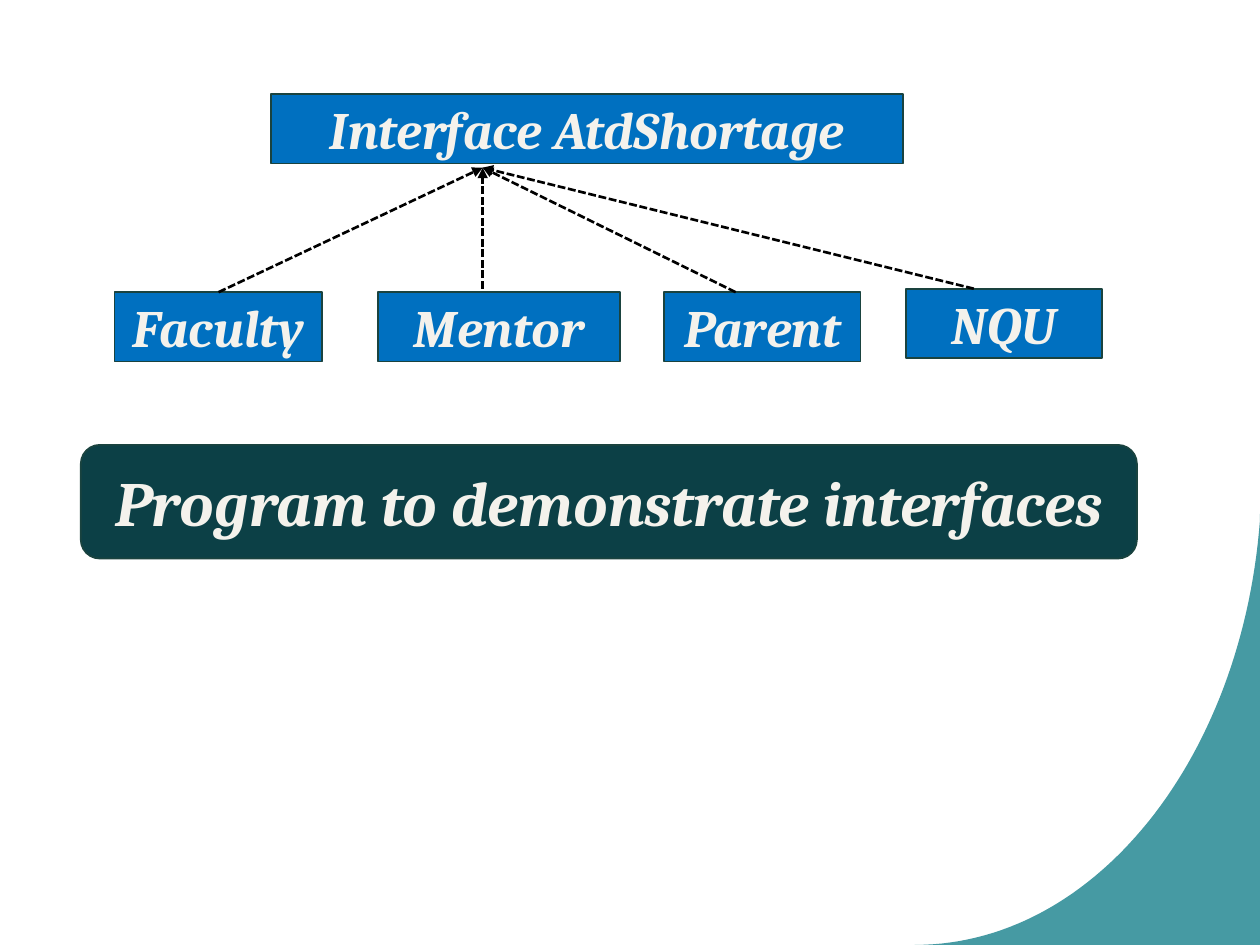
from lxml import etree
from pptx import Presentation
from pptx import util as u
from pptx.dml.color import RGBColor
from pptx.enum import dml, shapes, text
from pptx.oxml.ns import qn

TEAL = RGBColor(0x18, 0x81, 0x8C)
BLUE = RGBColor(0x00, 0x70, 0xC0)
DARK_TEAL = RGBColor(0x0C, 0x40, 0x46)
OUTLINE = RGBColor(0x1A, 0x43, 0x3F)
CREAM = RGBColor(0xF4, 0xF2, 0xEC)
BLACK = RGBColor(0, 0, 0)

RECTANGLE = shapes.MSO_SHAPE.RECTANGLE
ROUNDED = shapes.MSO_SHAPE.ROUNDED_RECTANGLE

presentation = Presentation()
presentation.slide_width = u.Cm(25.4)
presentation.slide_height = u.Cm(19.05)
slide = presentation.slides.add_slide(presentation.slide_layouts[6])


def add_box(label, kind, left, top, width, height, color, size):
    shape = slide.shapes.add_shape(kind, u.Cm(left), u.Cm(top), u.Cm(width), u.Cm(height))
    shape.shadow.inherit = False
    shape.fill.solid()
    shape.fill.fore_color.rgb = color
    shape.line.color.rgb = OUTLINE
    shape.line.width = u.Pt(1)
    shape.text_frame.vertical_anchor = text.MSO_ANCHOR.MIDDLE
    paragraph = shape.text_frame.paragraphs[0]
    paragraph.alignment = text.PP_ALIGN.CENTER
    run = paragraph.add_run()
    run.text = label
    run.font.name = "Cambria"
    run.font.size = u.Pt(size)
    run.font.bold = True
    run.font.italic = True
    run.font.color.rgb = CREAM
    return shape


curve_controls = [(18.44, 19.05), (22.07, 19.05), (25.04, 15.29), (25.4, 10.49)]
curve_steps = 60
curve_points = []
for step in range(curve_steps + 1):
    t = step / curve_steps
    weights = [(1 - t) ** 3, 3 * t * (1 - t) ** 2, 3 * t ** 2 * (1 - t), t ** 3]
    curve_points.append(tuple(
        u.Cm(sum(weight * point[axis] for weight, point in zip(weights, curve_controls)))
        for axis in (0, 1)
    ))

builder = slide.shapes.build_freeform(u.Cm(25.4), u.Cm(10.36))
builder.add_line_segments([(u.Cm(25.4), u.Cm(19.05))] + curve_points)
corner = builder.convert_to_shape()
corner.shadow.inherit = False
corner.fill.solid()
corner.fill.fore_color.rgb = TEAL
corner.line.fill.background()
corner_color = corner._element.spPr.find(qn("a:solidFill"))[0]
etree.SubElement(corner_color, qn("a:alpha"), val="80000")

box_height = 1.4
add_box("Interface AtdShortage", RECTANGLE, 5.46, 1.9, 12.75, box_height, BLUE, 30)

arrow_tip = (u.Cm(9.73), u.Cm(3.38))
implementers = [
    ("Faculty", 2.31, 5.89, 4.19, 4.4, 5.89),
    ("Mentor", 7.62, 5.89, 4.88, 9.73, 5.82),
    ("Parent", 13.39, 5.89, 3.96, 14.83, 5.89),
    ("NQU", 18.26, 5.82, 3.96, 19.63, 5.82),
]
for label, left, top, width, arrow_left, arrow_top in implementers:
    box = add_box(label, RECTANGLE, left, top, width, box_height, BLUE, 30)
    arrow = slide.shapes.add_connector(
        shapes.MSO_CONNECTOR.STRAIGHT, u.Cm(arrow_left), u.Cm(arrow_top), *arrow_tip)
    if label == "Faculty":
        arrow.begin_connect(box, 0)
    arrow.line.color.rgb = BLACK
    arrow.line.width = u.Pt(1.5)
    arrow.line.dash_style = dml.MSO_LINE.SQUARE_DOT
    properties = arrow._element.spPr
    etree.SubElement(properties.find(qn("a:ln")), qn("a:tailEnd"), type="triangle")
    etree.SubElement(properties, qn("a:effectLst"))

add_box("Program to demonstrate interfaces", ROUNDED, 1.63, 8.97, 21.29, 2.29, DARK_TEAL, 36)

presentation.save("out.pptx")
